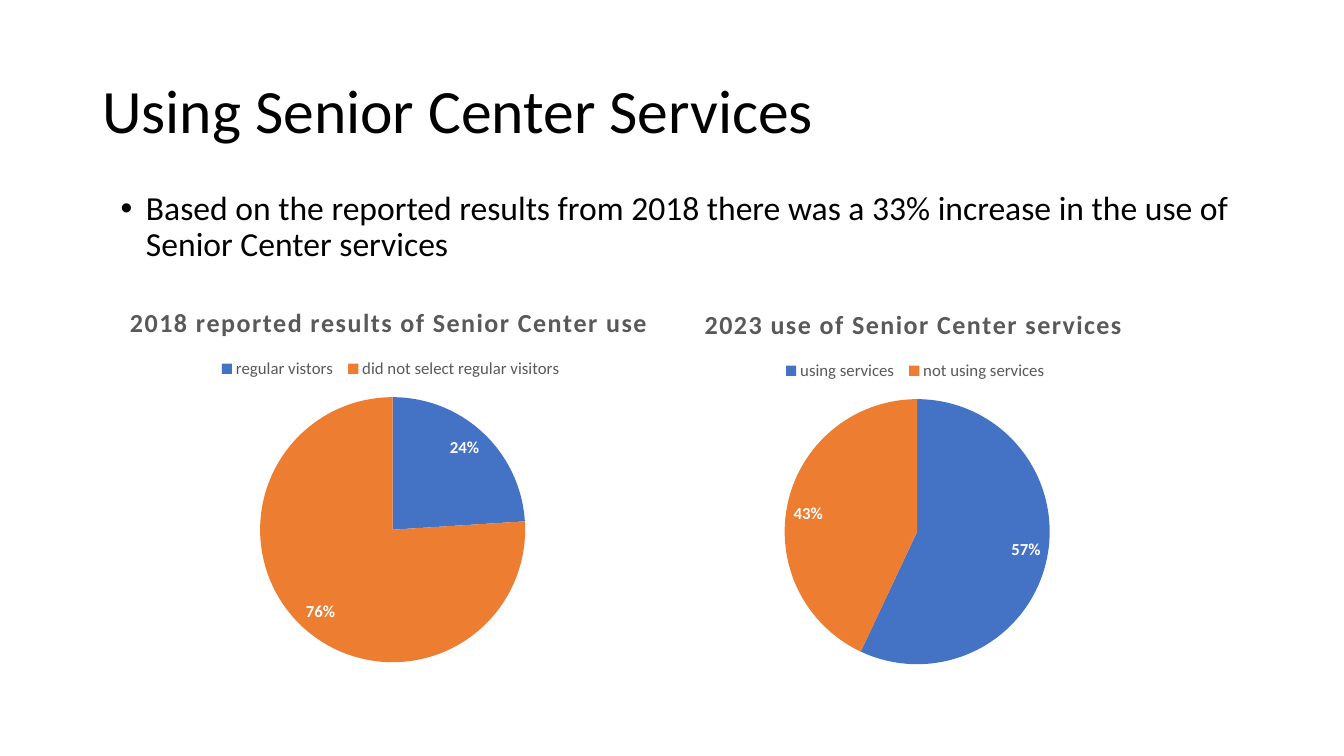
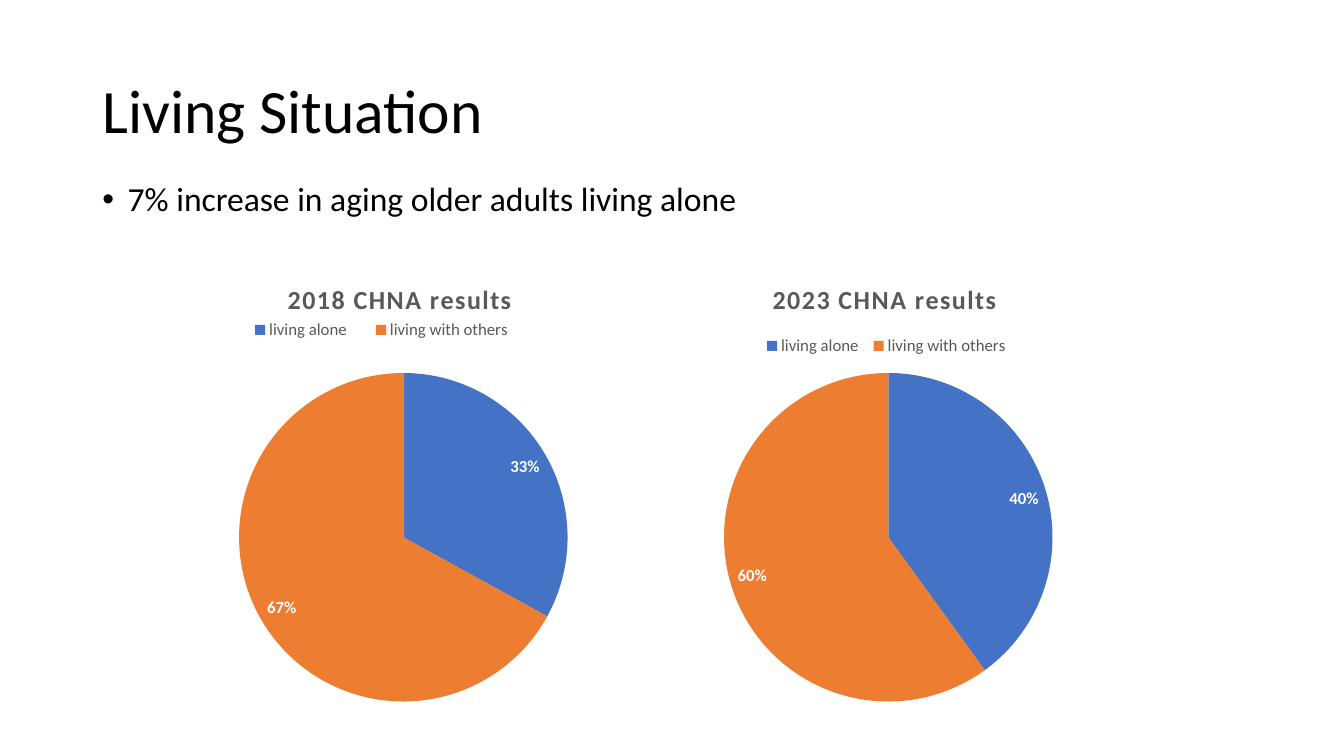
"""Build two slides that compare 2018 and 2023 survey results with pie charts."""
from pptx import Presentation
from pptx import util as u
from pptx.chart import data as cd
from pptx.dml.color import RGBColor
from pptx.enum import chart as ch, text
from pptx.oxml import parse_xml
from pptx.oxml.ns import nsdecls, qn

FONT = "Calibri"
BLACK, GRAY, WHITE = "000000", "595959", "FFFFFF"
SLICES = ("4472C4", "ED7D31")
TITLE_BOX = (2.33, 1.02, 29.21, 3.68)
PIE_TOP, PIE_MARGINS = 2.8, 3.15

TITLE_FONT = dict(name=FONT, size=u.Pt(44), color=BLACK)
BODY_FONT = dict(name=FONT, size=u.Pt(24), color=BLACK)
CHART_FONT = dict(name=FONT, size=u.Pt(10), color=BLACK)
HEADING_FONT = dict(name=FONT, size=u.Pt(18.6), bold=True, color=GRAY)
LEGEND_FONT = dict(name=FONT, size=u.Pt(12), bold=False, color=GRAY)
LABEL_FONT = dict(name=FONT, size=u.Pt(12), bold=True, color=WHITE)

SLIDES = [
    dict(
        title="Using Senior Center Services",
        body="Based on the reported results from 2018 there was a 33% increase "
             "in the use of Senior Center services",
        body_box=(2.79, 4.7, 29.21, 2.21),
        charts=[
            dict(box=(1.07, 7.21, 17.65, 9.83),
                 title="2018 reported results of Senior Center use ",
                 values={"regular vistors ": 24, "did not select regular visitors ": 76}),
            dict(box=(14.68, 7.26, 16.87, 9.83),
                 title="2023 use of Senior Center services ",
                 values={"using services ": 57, "not using services ": 43}),
        ],
    ),
    dict(
        title="Living Situation",
        body="7% increase in aging older adults living alone",
        body_box=(2.33, 4.47, 22.58, 1.17),
        charts=[
            dict(box=(2.33, 6.6, 15.67, 11.43),
                 title="2018 CHNA results ",
                 values={"living alone ": 33, "living with others": 67},
                 legend=(0.23, 0.12, 0.47, 0.06)),
            dict(box=(12.44, 6.6, 19.89, 11.43),
                 title="2023 CHNA results ",
                 values={"living alone ": 40, "living with others ": 60}),
        ],
    ),
]


def rgb(value):
    """Turn a hex string into a colour."""
    return RGBColor.from_string(value)


def style(font, formats):
    """Set font attributes from a dict."""
    for name, value in formats.items():
        if name == "color":
            font.color.rgb = rgb(value)
        else:
            setattr(font, name, value)


def add_text(slide, box, content, formats, anchor, bullet=False):
    """Add one paragraph of text, with a bullet if asked."""
    tf = slide.shapes.add_textbox(*map(u.Cm, box)).text_frame
    tf.word_wrap = True
    tf.vertical_anchor = anchor
    p = tf.paragraphs[0]
    p.line_spacing = 0.9
    r = p.add_run()
    r.text = content
    style(r.font, formats)
    if bullet:
        p.space_before = u.Pt(10)
        ppr = p._p.get_or_add_pPr()
        ppr.set("marL", str(u.Cm(0.64)))
        ppr.set("indent", str(u.Cm(-0.64)))
        for xml in (f'<a:buFont {nsdecls("a")} typeface="Arial"/>',
                    f'<a:buChar {nsdecls("a")} char="•"/>'):
            ppr.append(parse_xml(xml))


def set_layout(element, index, fractions, inner=False):
    """Give a chart part a fixed place as fractions of the chart."""
    for old in element.findall(qn("c:layout")):
        element.remove(old)
    target = '<c:layoutTarget val="inner"/>' if inner else ""
    modes = '<c:xMode val="edge"/><c:yMode val="edge"/>'
    sizes = "".join(f'<c:{k} val="{v:.4f}"/>' for k, v in zip("xywh", fractions))
    element.insert(index, parse_xml(
        f'<c:layout {nsdecls("c")}><c:manualLayout>{target}{modes}{sizes}'
        '</c:manualLayout></c:layout>'))


def add_pie(slide, box, title, values, legend=None):
    """Add a pie chart with heading, top legend and percent labels."""
    data = cd.CategoryChartData()
    data.categories = list(values)
    data.add_series(title, list(values.values()))
    chart = slide.shapes.add_chart(ch.XL_CHART_TYPE.PIE, *map(u.Cm, box), data).chart
    style(chart.font, CHART_FONT)

    chart.has_title = True
    r = chart.chart_title.text_frame.paragraphs[0].add_run()
    r.text = title
    style(r.font, HEADING_FONT)
    r._r.get_or_add_rPr().set("spc", "100")

    chart.has_legend = True
    chart.legend.position = ch.XL_LEGEND_POSITION.TOP
    chart.legend.include_in_layout = False
    style(chart.legend.font, LEGEND_FONT)
    if legend:
        set_layout(chart.legend._element, 1, legend)

    plot = chart.plots[0]
    plot.vary_by_categories = True
    for i, color in enumerate(SLICES):
        fill = plot.series[0].points[i].format.fill
        fill.solid()
        fill.fore_color.rgb = rgb(color)
    plot.has_data_labels = True
    labels = plot.data_labels
    formats = dict(show_percentage=True, show_value=False, number_format="0%",
                   number_format_is_linked=False,
                   position=ch.XL_LABEL_POSITION.INSIDE_END)
    for name, value in formats.items():
        setattr(labels, name, value)
    style(labels.font, LABEL_FONT)

    width, height = box[2:]
    side = height - PIE_MARGINS
    place = ((width - side) / 2 / width, PIE_TOP / height, side / width, side / height)
    set_layout(chart._chartSpace.chart.plotArea, 0, place, inner=True)


def main():
    """Build and save the presentation."""
    prs = Presentation()
    prs.slide_width, prs.slide_height = u.Cm(33.87), u.Cm(19.05)
    for item in SLIDES:
        slide = prs.slides.add_slide(prs.slide_layouts[6])
        add_text(slide, TITLE_BOX, item["title"], TITLE_FONT, text.MSO_ANCHOR.MIDDLE)
        add_text(slide, item["body_box"], item["body"], BODY_FONT,
                 text.MSO_ANCHOR.TOP, bullet=True)
        for chart in item["charts"]:
            add_pie(slide, **chart)
    prs.save("out.pptx")


if __name__ == "__main__":
    main()
